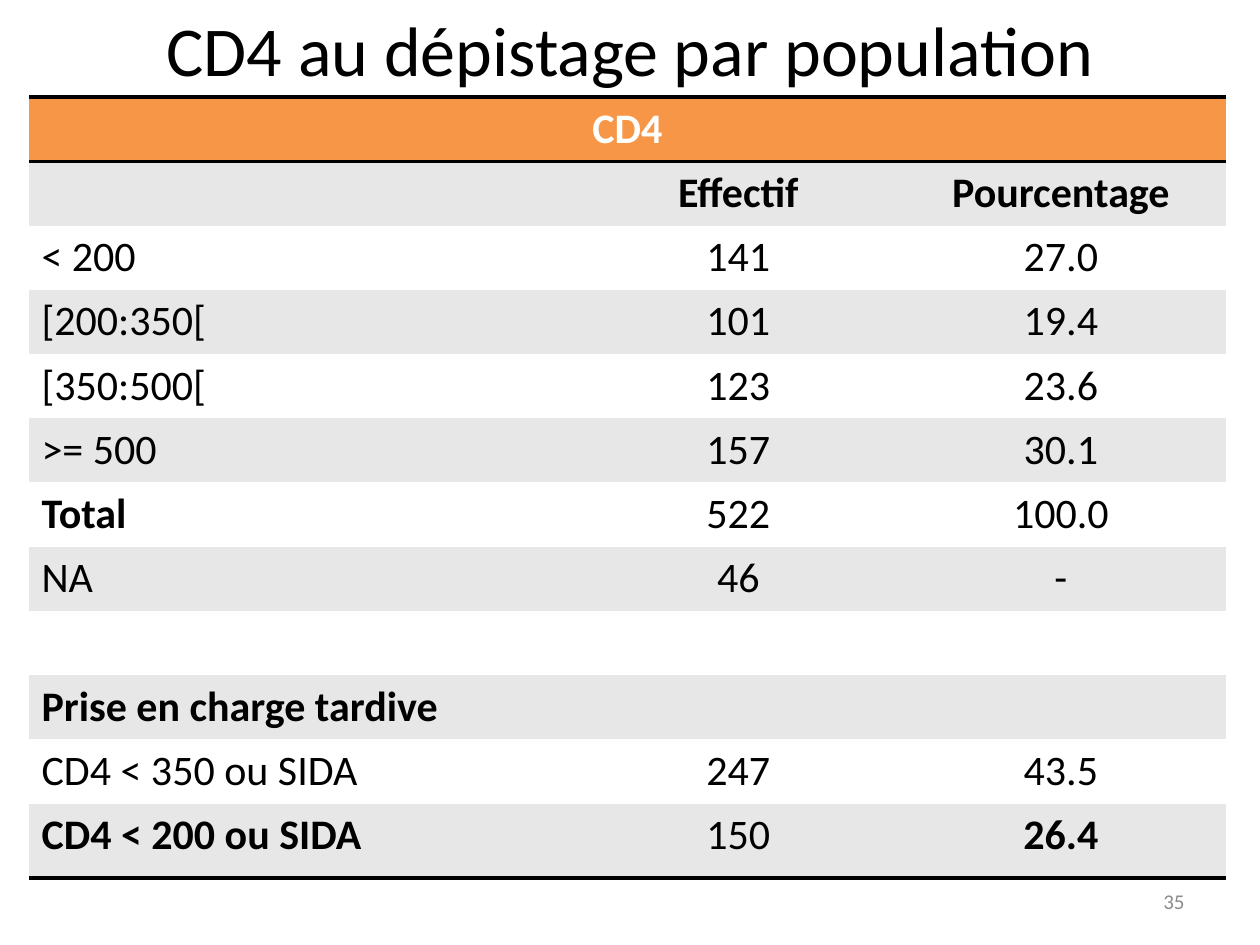
from lxml.etree import SubElement
from pptx import Presentation
from pptx.dml.color import RGBColor
from pptx.enum.text import MSO_ANCHOR as Anchor, PP_ALIGN as Align
from pptx.oxml import parse_xml
from pptx.oxml.ns import nsdecls, qn
from pptx.util import Inches, Pt

BLACK = RGBColor(0x00, 0x00, 0x00)
WHITE = RGBColor(0xFF, 0xFF, 0xFF)
ORANGE = RGBColor(0xF7, 0x96, 0x46)
BAND_GREY = RGBColor(0xE7, 0xE7, 0xE7)
NUMBER_GREY = RGBColor(0x8C, 0x8C, 0x8C)
FONT = "Calibri"
PLAIN_TABLE_STYLE = "{2D5ABB26-0587-4C30-8999-92F81FD0307C}"

COLUMN_WIDTHS = [4.38, 2.5, 2.62]
ROW_HEIGHT, LAST_ROW_HEIGHT = 0.51, 0.59
CD4_ROWS = [
    ("CD4", "", ""),
    ("", "Effectif", "Pourcentage"),
    ("< 200", "141", "27.0"),
    ("[200:350[", "101", "19.4"),
    ("[350:500[", "123", "23.6"),
    (">= 500", "157", "30.1"),
    ("Total", "522", "100.0"),
    ("NA", "46", "-"),
    ("", "", ""),
    ("Prise en charge tardive", "", ""),
    ("CD4 < 350 ou SIDA", "247", "43.5"),
    ("CD4 < 200 ou SIDA", "150", "26.4"),
]
BOLD_TEXTS = {"CD4", "Effectif", "Pourcentage", "Total",
              "Prise en charge tardive", "CD4 < 200 ou SIDA", "26.4"}


def write_text(frame, text, size, color, align, bold=False):
    """Write one formatted paragraph into a text frame."""
    paragraph = frame.paragraphs[0]
    paragraph.text = text
    paragraph.alignment = align
    for run in paragraph.runs:
        run.font.name = FONT
        run.font.size = Pt(size)
        run.font.bold = bold
        run.font.color.rgb = color


def add_label(slide, box, text, size, color, align, anchor):
    """Place a line of text in the given box."""
    label = slide.shapes.add_textbox(*map(Inches, box))
    label.text_frame.word_wrap = True
    label.text_frame.vertical_anchor = anchor
    write_text(label.text_frame, text, size, color, align)


def rule_cell(cell, sides):
    """Draw black 2 pt rules on the given sides of a cell."""
    properties = cell._tc.get_or_add_tcPr()
    for position, side in enumerate(sides):
        rule = parse_xml(f'<a:ln{side} {nsdecls("a")} w="{Pt(2)}"/>')
        fill = SubElement(rule, qn("a:solidFill"))
        SubElement(fill, qn("a:srgbClr"), val=str(BLACK))
        properties.insert(position, rule)


def add_cd4_table(slide, box):
    """Place the banded CD4 table in the given box."""
    last = len(CD4_ROWS) - 1
    frame = slide.shapes.add_table(
        len(CD4_ROWS), len(COLUMN_WIDTHS), *map(Inches, box))
    table = frame.table
    table._tbl.tblPr.find(qn("a:tableStyleId")).text = PLAIN_TABLE_STYLE
    for column, width in zip(table.columns, COLUMN_WIDTHS):
        column.width = Inches(width)
    rules = {0: "TB", last: "B"}
    for r, texts in enumerate(CD4_ROWS):
        table.rows[r].height = Inches(LAST_ROW_HEIGHT if r == last else ROW_HEIGHT)
        for c, text in enumerate(texts):
            cell = table.cell(r, c)
            cell.fill.solid()
            cell.fill.fore_color.rgb = (
                ORANGE if r == 0 else BAND_GREY if r % 2 else WHITE)
            cell.vertical_anchor = Anchor.MIDDLE if r < 2 else Anchor.TOP
            write_text(cell.text_frame, text, 24, BLACK if r else WHITE,
                       Align.CENTER if r == 0 or c else Align.LEFT,
                       text in BOLD_TEXTS)
            rule_cell(cell, rules.get(r, ""))
    table.cell(0, 0).merge(table.cell(0, len(COLUMN_WIDTHS) - 1))


def main():
    """Build and save the slide."""
    presentation = Presentation()
    presentation.slide_width = Inches(10)
    presentation.slide_height = Inches(7.5)
    slide = presentation.slides.add_slide(presentation.slide_layouts[6])
    add_label(slide, (7.17, 6.95, 2.33, 0.4), "35", 12, NUMBER_GREY,
              Align.RIGHT, Anchor.MIDDLE)
    add_label(slide, (0, 0, 10, 0.77), "CD4 au dépistage par population", 40,
              BLACK, Align.CENTER, Anchor.TOP)
    add_cd4_table(slide, (0.23, 0.77, 9.5, 6.23))
    presentation.save("out.pptx")


if __name__ == "__main__":
    main()
